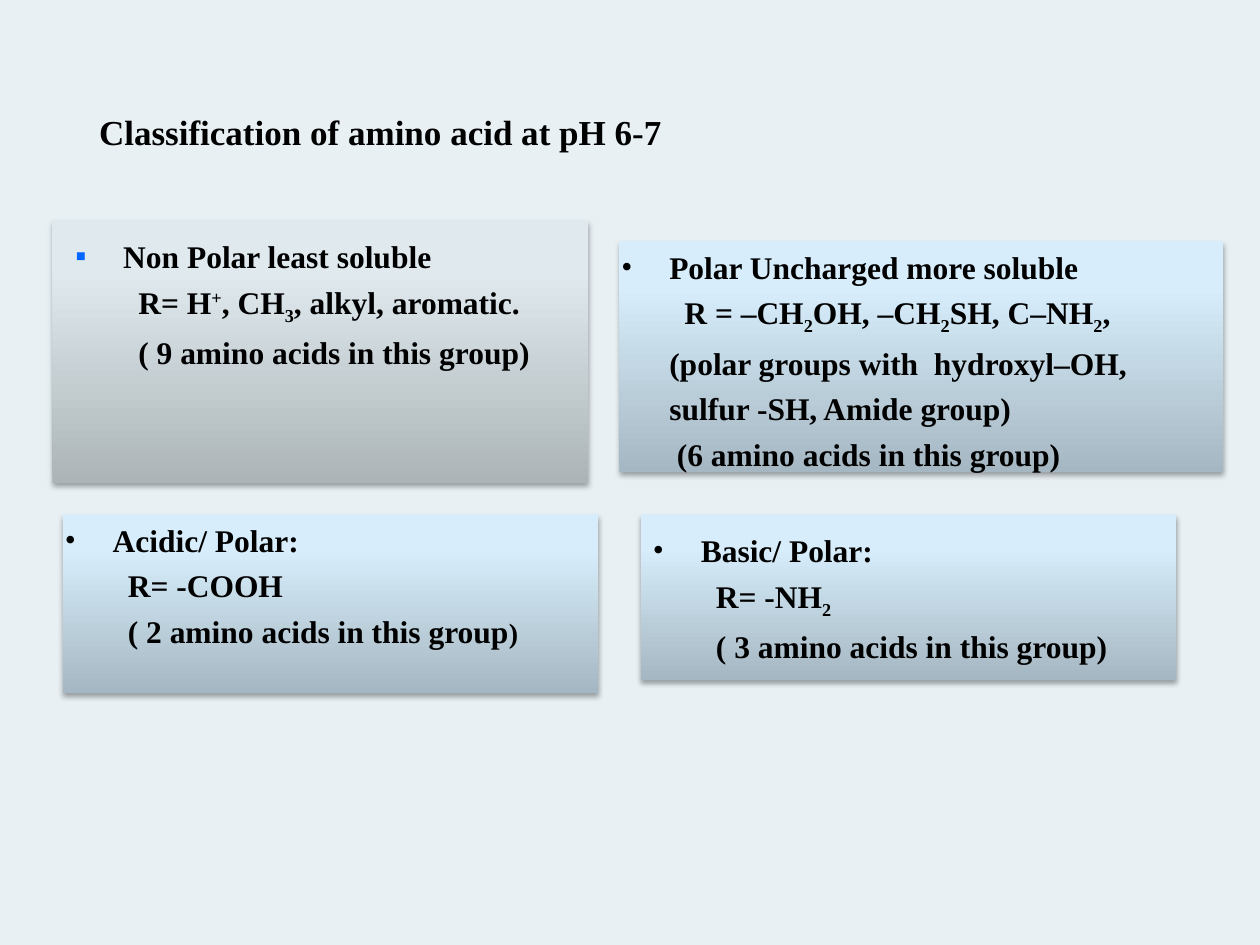
from dataclasses import dataclass

from lxml import etree
from pptx import Presentation
from pptx.dml.color import RGBColor
from pptx.enum.shapes import MSO_SHAPE
from pptx.enum.text import MSO_ANCHOR
from pptx.oxml.ns import qn
from pptx.util import Inches, Pt

RECTANGLE = MSO_SHAPE.RECTANGLE
MIDDLE = MSO_ANCHOR.MIDDLE
TOP = MSO_ANCHOR.TOP
BLANK_LAYOUT = 6
COLUMNS, ROWS = 120, 90


@dataclass(frozen=True)
class Theme:
    font: str = "Times New Roman"
    ink: str = "000000"
    background: str = "E8F0F4"
    square_bullet: str = "0066FF"
    blue: tuple = ((0, "A5B7C2"), (80, "D7EDFB"), (100, "D7EFFD"))
    grey: tuple = ((0, "ACB4B7"), (80, "DFE9EE"), (100, "E0EAF0"))
    title_size: float = 20
    body_size: float = 18
    small_size: float = 16
    space_before: float = 4.4
    hanging: float = 0.38


@dataclass(frozen=True)
class Group:
    card: tuple
    text_offset: tuple
    text_size: tuple
    stops: tuple
    bullet: str
    bullet_color: str
    heading: str
    details: tuple


THEME = Theme()
BASELINES = {"sub": -25000, "sup": 30000}
INNER, FLUSH, NUDGED = 0.5, 0.38, 0.44

GROUPS = (
    Group((5, 21, 51, 25), (1, 1), (53, 28), THEME.grey, "▪", THEME.square_bullet,
          "Non Polar least soluble",
          ((INNER, (("R= H", ""), ("+", "sup"), (", CH", ""), ("3", "sub"),
                    (", alkyl, aromatic.", ""))),
           (INNER, (("( 9 amino acids in this group)", ""),)))),
    Group((59, 23, 57.5, 22), (-1, 0), (62, 21.5), THEME.blue, "•", THEME.ink,
          "Polar Uncharged more soluble",
          ((INNER, (("R = –CH", ""), ("2", "sub"), ("OH, –CH", ""), ("2", "sub"),
                    ("SH, C–NH", ""), ("2", "sub"), (",", ""))),
           (FLUSH, (("(polar groups with  hydroxyl–OH,", ""),)),
           (FLUSH, (("sulfur -SH, Amide group)", ""),)),
           (NUDGED, (("(6 amino acids in this group)", ""),)))),
    Group((6, 49, 51, 17), (-1, 0), (53, 16), THEME.blue, "•", THEME.ink,
          "Acidic/ Polar:",
          ((INNER, (("R= -COOH", ""),)),
           (INNER, (("( 2 amino acids in this group", ""), (")", "small"))))),
    Group((61, 49, 51, 15.75), (0, 1), (52, 13.5), THEME.blue, "•", THEME.ink,
          "Basic/ Polar:",
          ((INNER, (("R= -NH", ""), ("2", "sub"))),
           (INNER, (("( 3 amino acids in this group)", ""),)))),
)


def place(deck, cells):
    left, top, width, height = cells
    column, row = deck.slide_width / COLUMNS, deck.slide_height / ROWS
    return round(left * column), round(top * row), round(width * column), round(height * row)


def add_color(parent, value):
    return etree.SubElement(parent, qn("a:srgbClr"), val=value)


def add_span(para, text, size, style=""):
    span = para.add_run()
    span.text = text
    font = span.font
    font.name = THEME.font
    font.size = Pt(THEME.small_size if style == "small" else size)
    font.bold = True
    font.color.rgb = RGBColor.from_string(THEME.ink)
    if style in BASELINES:
        font._element.set("baseline", str(BASELINES[style]))


def set_indent(para, margin, first_line=0):
    para.space_before = Pt(THEME.space_before)
    properties = para._p.get_or_add_pPr()
    properties.set("marL", str(Inches(margin)))
    properties.set("indent", str(Inches(first_line)))
    return properties


def add_bullet(properties, character, color):
    add_color(etree.SubElement(properties, qn("a:buClr")), color)
    etree.SubElement(properties, qn("a:buFont"), typeface=THEME.font)
    etree.SubElement(properties, qn("a:buChar"), char=character)


def add_text_frame(deck, page, cells, anchor):
    frame = page.shapes.add_textbox(*place(deck, cells)).text_frame
    frame.word_wrap = True
    frame.vertical_anchor = anchor
    return frame


def add_title(deck, page, cells):
    frame = add_text_frame(deck, page, cells, MIDDLE)
    add_span(frame.paragraphs[0], "Classification of amino acid at pH 6-7", THEME.title_size)


def add_card(deck, page, cells, stops):
    card = page.shapes.add_shape(RECTANGLE, *place(deck, cells))
    card.line.fill.background()
    card.fill.gradient()
    card.fill.gradient_angle = 90
    properties = card._element.spPr
    stop_list = properties.find(".//" + qn("a:gsLst"))
    stop_list.clear()
    for position, color in stops:
        stop = etree.SubElement(stop_list, qn("a:gs"), pos=str(position * 1000))
        add_color(stop, color)
    card.shadow.inherit = False
    shadow = etree.SubElement(
        properties.find(qn("a:effectLst")), qn("a:outerShdw"),
        blurRad=str(Pt(3.1)), dist=str(Pt(1.8)), dir="5400000", rotWithShape="0")
    etree.SubElement(add_color(shadow, THEME.ink), qn("a:alpha"), val="35000")


def add_group_text(deck, page, group):
    left, top = (edge + shift for edge, shift in zip(group.card, group.text_offset))
    frame = add_text_frame(deck, page, (left, top, *group.text_size), TOP)
    heading = frame.paragraphs[0]
    properties = set_indent(heading, THEME.hanging, -THEME.hanging)
    add_bullet(properties, group.bullet, group.bullet_color)
    add_span(heading, group.heading, THEME.body_size)
    for margin, spans in group.details:
        para = frame.add_paragraph()
        set_indent(para, margin)
        for text, style in spans:
            add_span(para, text, THEME.body_size, style)


def main():
    deck = Presentation()
    deck.slide_width, deck.slide_height = Inches(10), Inches(7.5)
    page = deck.slides.add_slide(deck.slide_layouts[BLANK_LAYOUT])
    page.background.fill.solid()
    page.background.fill.fore_color.rgb = RGBColor.from_string(THEME.background)
    for group in reversed(GROUPS):
        add_card(deck, page, group.card, group.stops)
    add_title(deck, page, (8.25, 5, 82.75, 15))
    for group in GROUPS:
        add_group_text(deck, page, group)
    deck.save("out.pptx")


if __name__ == "__main__":
    main()
